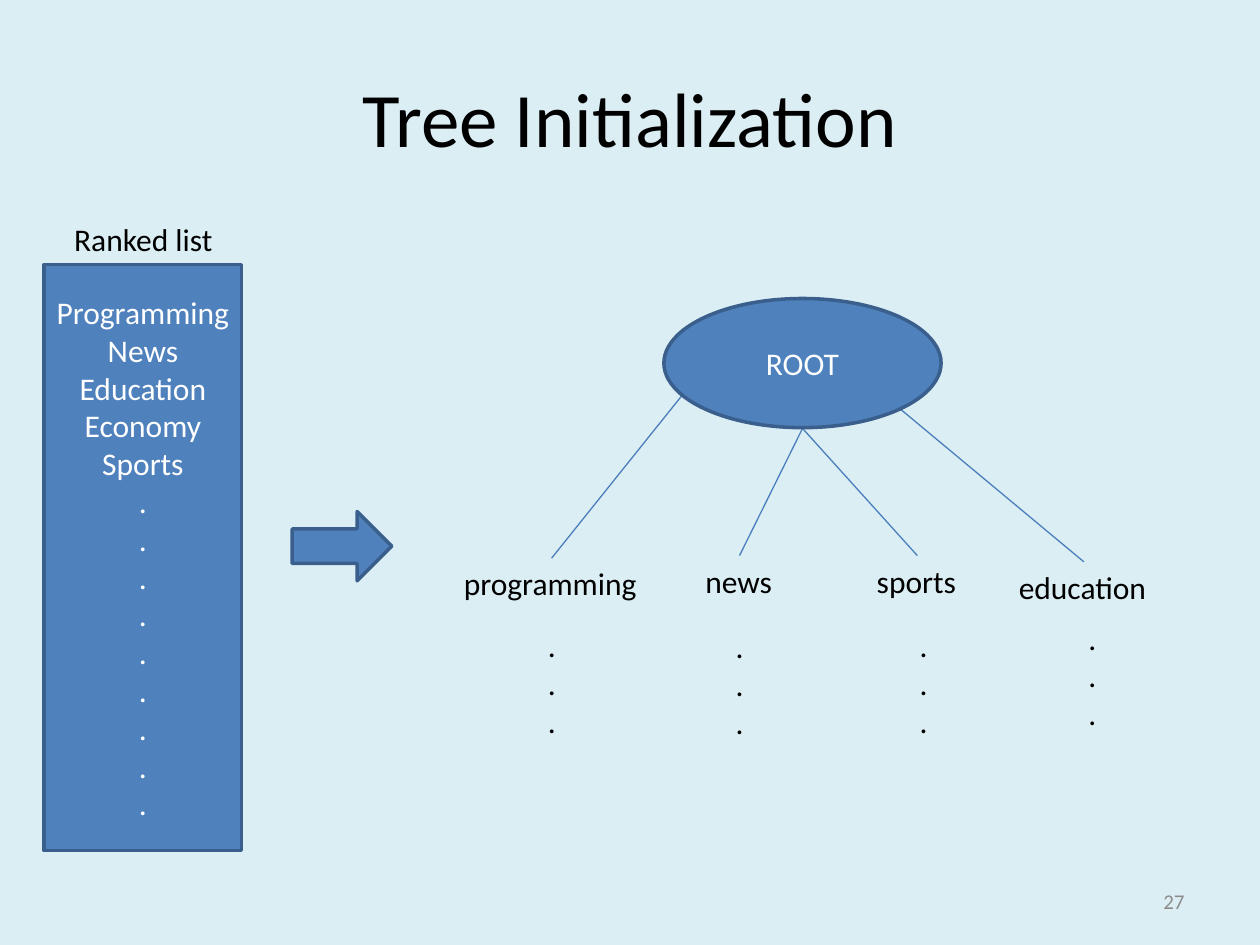
from lxml import etree
from pptx import Presentation
from pptx.dml.color import RGBColor
from pptx.enum.shapes import MSO_CONNECTOR, MSO_SHAPE
from pptx.enum.text import MSO_ANCHOR, PP_ALIGN
from pptx.oxml.ns import qn
from pptx.util import Pt

LEFT, CENTER, RIGHT = PP_ALIGN.LEFT, PP_ALIGN.CENTER, PP_ALIGN.RIGHT
TOP, MIDDLE = MSO_ANCHOR.TOP, MSO_ANCHOR.MIDDLE
RECTANGLE, OVAL, RIGHT_ARROW = MSO_SHAPE.RECTANGLE, MSO_SHAPE.OVAL, MSO_SHAPE.RIGHT_ARROW
STRAIGHT = MSO_CONNECTOR.STRAIGHT

FONT = "Calibri"
BACKGROUND, BLACK, WHITE, GRAY = "DBEEF4", "000000", "FFFFFF", "8C8C8C"
BLUE, OUTLINE, BRANCH = "4F81BD", "3A5F8C", "4B7EBC"

TITLE = "Tree Initialization"
PAGE_NUMBER = "27"
RANKED = ["Programming", "News", "Education", "Economy", "Sports"] + ["."] * 9
# label, center, top, width, branch start, dots left, dots top
CHILDREN = [
    ("programming", 315.2, 319, 114.5, (390.2, 225.4), 306, 354.2),
    ("news", 422.6, 317.5, 53.3, (458.6, 244.8), 413.3, 355),
    ("sports", 524.2, 317.5, 60.5, (458.6, 244.8), 518.4, 354.2),
    ("education", 619.4, 321.1, 88.6, (514.8, 234), 614.9, 349.9),
]
LABEL_HEIGHT = 29
DOTS_WIDTH, DOTS_HEIGHT = 19.4, 94.3


def rgb(color):
    return RGBColor.from_string(color)


def write(shape, lines, size=18, color=BLACK, align=LEFT, anchor=TOP, wrap=False):
    frame = shape.text_frame
    frame.word_wrap = wrap
    frame.vertical_anchor = anchor
    frame.text = "\n".join(lines)
    for paragraph in frame.paragraphs:
        paragraph.alignment = align
        for run in paragraph.runs:
            run.font.name = FONT
            run.font.size = Pt(size)
            run.font.color.rgb = rgb(color)


def add_text(slide, box, lines, **style):
    write(slide.shapes.add_textbox(*map(Pt, box)), lines, **style)


def add_block(slide, kind, box, lines=()):
    block = slide.shapes.add_shape(kind, *map(Pt, box))
    block.shadow.inherit = False
    block.fill.solid()
    block.fill.fore_color.rgb = rgb(BLUE)
    block.line.color.rgb = rgb(OUTLINE)
    block.line.width = Pt(2)
    if lines:
        block.text_frame.margin_left = block.text_frame.margin_right = Pt(4)
        write(block, lines, color=WHITE, align=CENTER, anchor=MIDDLE, wrap=True)


def add_branch(slide, start, end):
    branch = slide.shapes.add_connector(STRAIGHT, *map(Pt, start + end))
    branch.line.color.rgb = rgb(BRANCH)
    branch.line.width = Pt(0.75)
    etree.SubElement(branch._element.spPr, qn("a:effectLst"))


def main():
    deck = Presentation()
    deck.slide_width, deck.slide_height = Pt(720), Pt(540)
    slide = deck.slides.add_slide(deck.slide_layouts[6])
    slide.background.fill.solid()
    slide.background.fill.fore_color.rgb = rgb(BACKGROUND)

    add_text(slide, (36, 21.6, 648, 90), [TITLE], size=44, align=CENTER, anchor=MIDDLE, wrap=True)
    add_text(slide, (516, 500.4, 168, 28.8), [PAGE_NUMBER],
             size=12, color=GRAY, align=RIGHT, anchor=MIDDLE, wrap=True)
    add_block(slide, RECTANGLE, (25.2, 151.2, 113, 334.8), RANKED)
    add_text(slide, (35.3, 122.4, 94.3, LABEL_HEIGHT), ["Ranked list"])
    add_block(slide, RIGHT_ARROW, (167, 292.3, 56.9, 39.6))

    for label, center, top, width, start, dots_left, dots_top in CHILDREN:
        add_branch(slide, start, (center, top))
        add_text(slide, (center - width / 2, top, width, LABEL_HEIGHT), [label])
        add_text(slide, (dots_left, dots_top, DOTS_WIDTH, DOTS_HEIGHT), ["."] * 3)
    add_block(slide, OVAL, (379.4, 170.6, 158.4, 73.8), ["ROOT"])

    deck.save("out.pptx")


if __name__ == "__main__":
    main()
